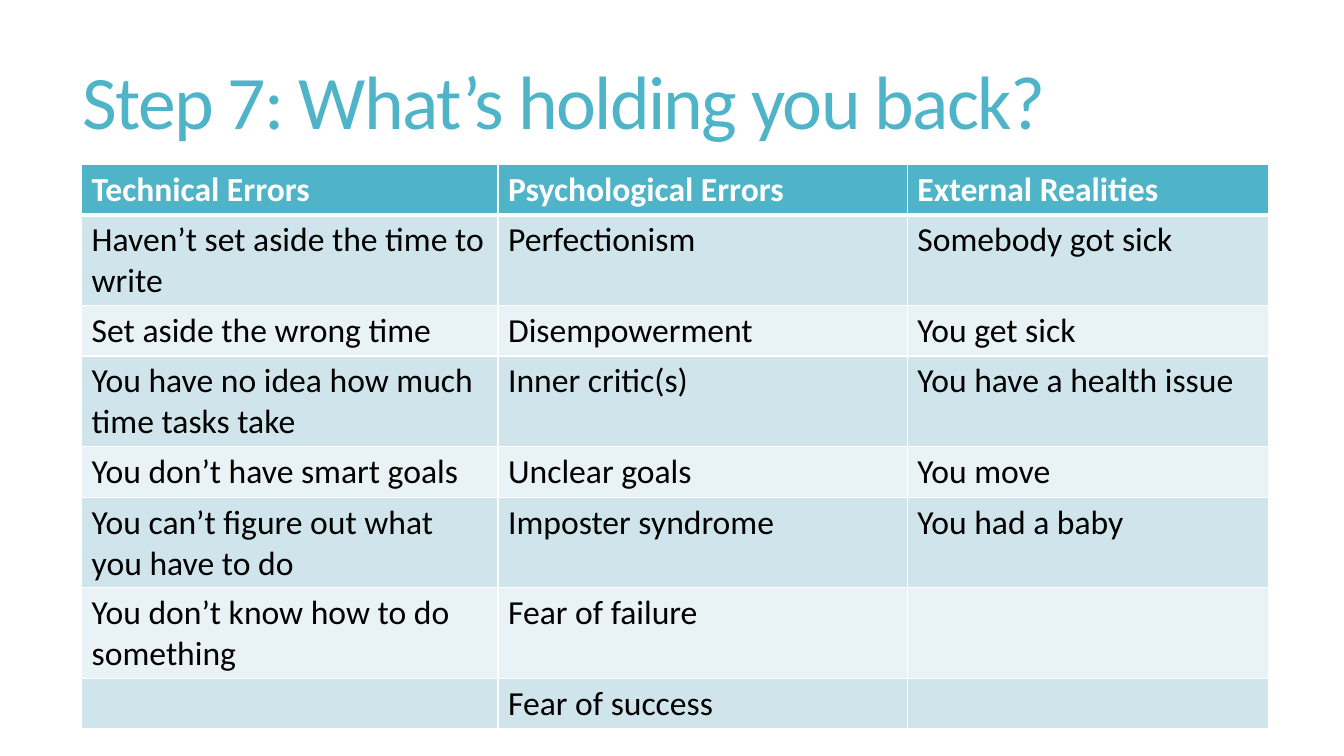
from lxml.etree import SubElement
from pptx import Presentation
from pptx.dml.color import RGBColor
from pptx.enum.text import MSO_ANCHOR
from pptx.oxml.ns import qn
from pptx.util import Inches, Pt

TEAL, WHITE, BLACK = "50B4C8", "FFFFFF", "000000"
BANDS = ["E9F2F5", "D0E5EB"]
ROWS = [
    ("Technical Errors", "Psychological Errors", "External Realities"),
    ("Haven’t set aside the time to write", "Perfectionism", "Somebody got sick"),
    ("Set aside the wrong time", "Disempowerment", "You get sick"),
    ("You have no idea how much time tasks take", "Inner critic(s)", "You have a health issue"),
    ("You don’t have smart goals", "Unclear goals", "You move"),
    ("You can’t figure out what you have to do", "Imposter syndrome", "You had a baby"),
    ("You don’t know how to do something", "Fear of failure", ""),
    ("", "Fear of success", ""),
]


def color(value):
    return RGBColor.from_string(value)


def add_border(cell, side, width):
    line = SubElement(cell._tc.get_or_add_tcPr(), qn(f"a:ln{side}"), w=str(Pt(width)))
    fill = SubElement(line, qn("a:solidFill"))
    SubElement(fill, qn("a:srgbClr"), val=WHITE)


presentation = Presentation()
presentation.slide_width = Inches(13.33)
presentation.slide_height = Inches(7.5)
slide = presentation.slides.add_slide(presentation.slide_layouts[6])

# Title
title = slide.shapes.add_textbox(Inches(0.72), Inches(0.55), Inches(11.78), Inches(1.01))
title.text_frame.word_wrap = True
title.text_frame.vertical_anchor = MSO_ANCHOR.MIDDLE
paragraph = title.text_frame.paragraphs[0]
paragraph.text = "Step 7: What’s holding you back?"
paragraph.line_spacing = 0.85
run = paragraph.runs[0]
run.font.name = "Calibri"
run.font.size = Pt(54)
run.font.color.rgb = color(TEAL)
run.font._element.set("spc", "-120")

# Table grid; rows grow to fit their text
row_height = Inches(0.41)
table = slide.shapes.add_table(
    len(ROWS), 3, Inches(0.81), Inches(1.63), Inches(11.77), row_height * len(ROWS)
).table
for column, width in zip(table.columns, (4.13, 4.06, 3.58)):
    column.width = Inches(width)

# Cells with a heavier rule below the header
for row_index, texts in enumerate(ROWS):
    is_header = row_index == 0
    for column_index, text in enumerate(texts):
        cell = table.cell(row_index, column_index)
        add_border(cell, "L", 1)
        add_border(cell, "R", 1)
        add_border(cell, "T", 3 if row_index == 1 else 1)
        add_border(cell, "B", 3 if is_header else 1)
        cell.fill.solid()
        cell.fill.fore_color.rgb = color(TEAL if is_header else BANDS[row_index % 2])
        cell.text_frame.text = text
        for run in cell.text_frame.paragraphs[0].runs:
            run.font.name = "Calibri"
            run.font.size = Pt(24)
            run.font.bold = is_header
            run.font.color.rgb = color(WHITE if is_header else BLACK)

presentation.save("out.pptx")
